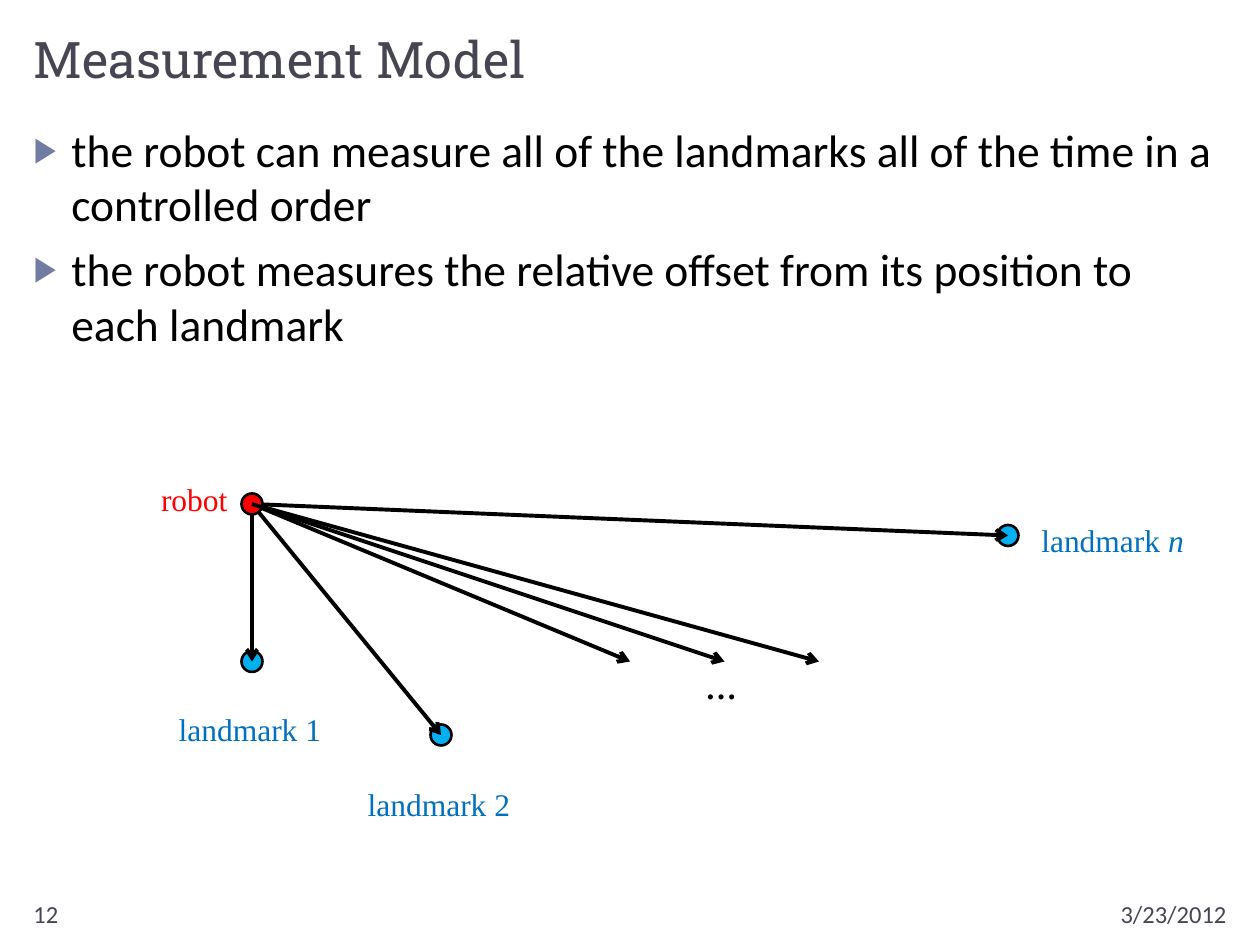
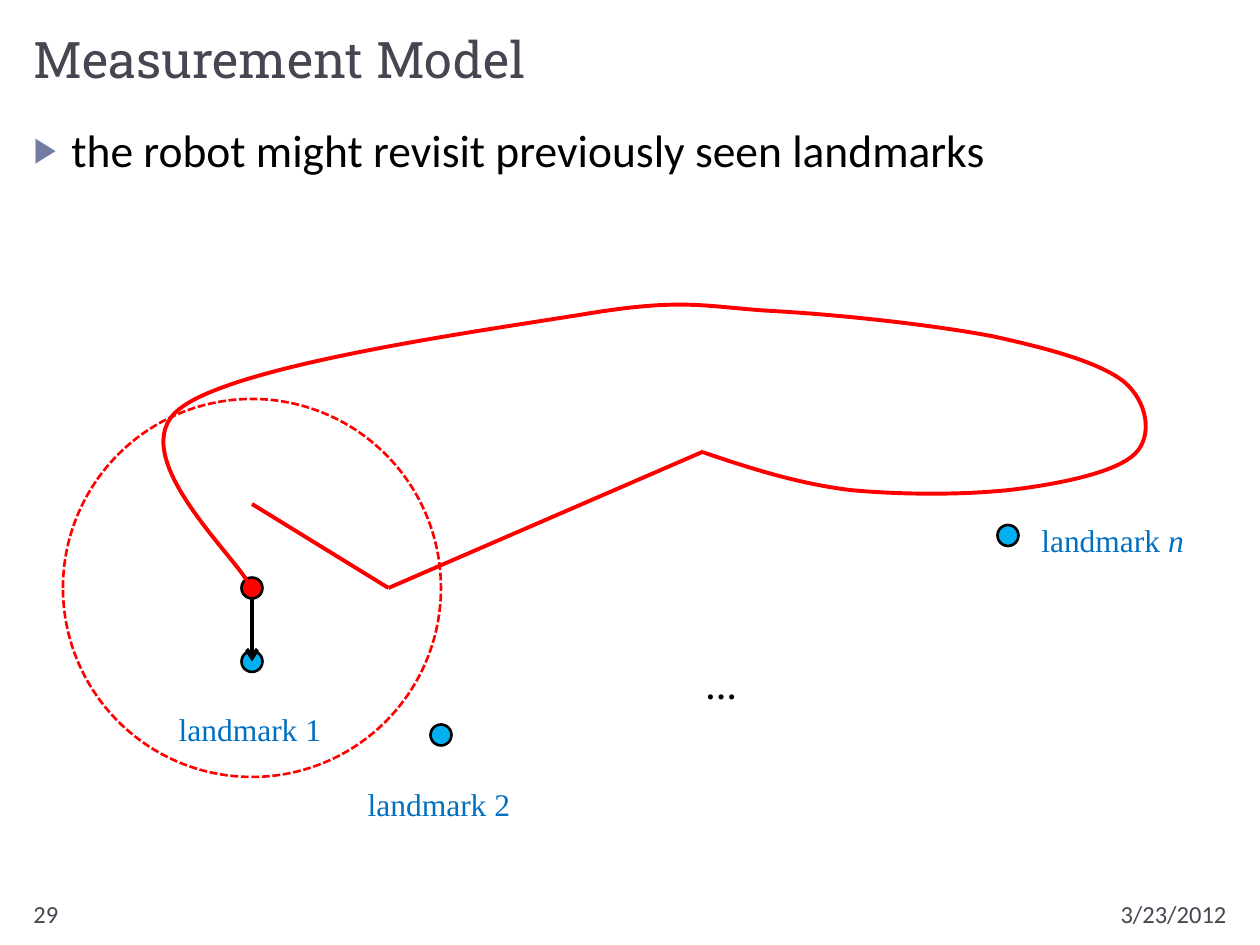
from dataclasses import dataclass

from lxml.etree import SubElement
from pptx import Presentation
from pptx.dml.color import RGBColor
from pptx.enum.dml import MSO_LINE
from pptx.enum.shapes import MSO_CONNECTOR, MSO_SHAPE
from pptx.enum.text import MSO_ANCHOR, MSO_AUTO_SIZE, PP_ALIGN
from pptx.oxml.ns import qn
from pptx.util import Inches, Pt


@dataclass(frozen=True)
class Theme:
    # Colours
    ink: str = "464653"
    black: str = "000000"
    bullet: str = "727CA3"
    robot: str = "FF0000"
    landmark: str = "00B0F0"
    landmark_text: str = "0070C0"
    # Fonts
    title_font: str = "Roboto Slab"
    body_font: str = "Calibri"
    label_font: str = "Times New Roman"
    # Type sizes and line widths in points
    title_size: float = 28.8
    body_size: float = 26
    label_size: float = 18
    footer_size: float = 14
    outline: float = 1.5
    stroke: float = 2.25


# Layout grid of twelfths of an inch
UNIT = 1 / 12
MARGIN = 2 * UNIT
CONTENT_WIDTH = 10 - 2 * MARGIN
DOT = 2 * UNIT

DATE = "3/23/2012"
ROBOT_START = (2, 4)
ROBOT_RETURN = (2, 56 * UNIT)
LANDMARK_1, LANDMARK_2, LANDMARK_N = (2, 5.25), (3.5, 70 * UNIT), (8, 4.25)
SENSOR_RADIUS = 1.5

# Start of the return path, then (control, control, end) for each curve
PATH_START = (5.58, 3.59)
PATH_CURVES = [
    ((5.96, 3.72), (6.34, 3.84), (6.75, 3.89)),
    ((7.17, 3.93), (7.71, 3.93), (8.09, 3.88)),
    ((8.47, 3.83), (8.87, 3.74), (9.01, 3.6)),
    ((9.15, 3.46), (9.11, 3.19), (8.92, 3.03)),
    ((8.73, 2.88), (8.34, 2.77), (7.88, 2.67)),
    ((7.41, 2.58), (6.68, 2.5), (6.15, 2.47)),
    ((5.61, 2.44), (5.45, 2.36), (4.66, 2.49)),
    ((3.87, 2.62), (1.86, 2.89), (1.42, 3.25)),
    ((0.97, 3.61), (1.89, 4.43), (1.99, 4.66)),
]


class Deck:
    def __init__(self, theme):
        self.theme = theme
        self.prs = Presentation()
        self.prs.slide_width, self.prs.slide_height = Inches(10), Inches(7.5)
        self.s = None

    # Shared helpers
    def place(self, sp, left, top, width, height):
        box = dict(left=left, top=top, width=width, height=height)
        for name, value in box.items():
            setattr(sp, name, Inches(value))

    def frame(self, sp, **formats):
        for name, value in formats.items():
            setattr(sp.text_frame, name, value)
        return sp.text_frame

    def run(self, p, text, font, size, color, **formats):
        r = p.add_run()
        r.text = text
        for name, value in dict(name=font, size=Pt(size), **formats).items():
            setattr(r.font, name, value)
        r.font.color.rgb = RGBColor.from_string(color)

    def stroke(self, sp, color, width):
        sp.line.color.rgb = RGBColor.from_string(color)
        sp.line.width = Pt(width)

    # Slide with title, bulleted body and footers
    def slide(self, title, bullets, number):
        th = self.theme
        self.s = self.prs.slides.add_slide(self.prs.slide_layouts[1])
        sp = self.s.shapes.title
        self.place(sp, MARGIN, MARGIN, CONTENT_WIDTH, 7 * UNIT)
        tf = self.frame(sp, vertical_anchor=MSO_ANCHOR.BOTTOM,
                        auto_size=MSO_AUTO_SIZE.NONE)
        p = tf.paragraphs[0]
        p.alignment = PP_ALIGN.LEFT
        self.run(p, title, th.title_font, th.title_size, th.ink)
        self.body(bullets)
        self.footer(8, 22 * UNIT, DATE, PP_ALIGN.RIGHT)
        self.footer(MARGIN, 26 * UNIT, number, PP_ALIGN.LEFT)

    def body(self, bullets):
        th = self.theme
        sp = self.s.placeholders[1]
        self.place(sp, MARGIN, 11 * UNIT, CONTENT_WIDTH, 6)
        tf = self.frame(sp, auto_size=MSO_AUTO_SIZE.NONE)
        for i, text in enumerate(bullets):
            p = tf.add_paragraph() if i else tf.paragraphs[0]
            p.space_before = Pt(6)
            self.bullet(p)
            self.run(p, text, th.body_font, th.body_size, th.black)

    def bullet(self, p):
        pPr = p._p.get_or_add_pPr()
        pPr.set("marL", str(Inches(0.3)))
        pPr.set("indent", str(-Inches(0.3)))
        color = SubElement(pPr, qn("a:buClr"))
        SubElement(color, qn("a:srgbClr"), val=self.theme.bullet)
        SubElement(pPr, qn("a:buSzPct"), val="76000")
        SubElement(pPr, qn("a:buChar"), char="▶")

    def footer(self, left, width, text, alignment):
        th = self.theme
        sp = self.s.shapes.add_textbox(
            Inches(left), Inches(85 * UNIT), Inches(width), Inches(0.27))
        p = self.frame(sp, word_wrap=True).paragraphs[0]
        p.alignment = alignment
        self.run(p, text, th.body_font, th.footer_size, th.ink)

    # Diagram elements
    def label(self, left, top, width, text, color, italic="", **formats):
        th = self.theme
        sp = self.s.shapes.add_textbox(
            Inches(left), Inches(top), Inches(width), Inches(0.4))
        tf = self.frame(sp, word_wrap=False,
                        auto_size=MSO_AUTO_SIZE.SHAPE_TO_FIT_TEXT)
        p = tf.paragraphs[0]
        self.run(p, text, th.label_font, th.label_size, color, **formats)
        if italic:
            self.run(p, italic, th.label_font, th.label_size, color, italic=True)

    def circle(self, center, diameter, line, fill=None):
        x, y = (c - diameter / 2 for c in center)
        sp = self.s.shapes.add_shape(
            MSO_SHAPE.OVAL, Inches(x), Inches(y),
            Inches(diameter), Inches(diameter))
        sp.shadow.inherit = False
        self.stroke(sp, line, self.theme.outline)
        if fill:
            sp.fill.solid()
            sp.fill.fore_color.rgb = RGBColor.from_string(fill)
        else:
            sp.fill.background()
        return sp

    def dot(self, center, fill):
        self.circle(center, DOT, self.theme.black, fill)

    def sensor_range(self, center):
        sp = self.circle(center, 2 * SENSOR_RADIUS, self.theme.robot)
        sp.line.dash_style = MSO_LINE.SQUARE_DOT
        sp.line._get_or_add_ln().find(qn("a:prstDash")).set("val", "sysDash")

    def line(self, start, end, color, arrow=False):
        sp = self.s.shapes.add_connector(
            MSO_CONNECTOR.STRAIGHT, *map(Inches, (*start, *end)))
        self.stroke(sp, color, self.theme.stroke)
        if arrow:
            SubElement(sp.line._get_or_add_ln(), qn("a:tailEnd"), type="arrow")
        SubElement(sp._element.spPr, qn("a:effectLst"))

    def arrow(self, start, end):
        self.line(start, end, self.theme.black, arrow=True)

    def curve(self, start, curves, color):
        points = [tuple(map(Inches, pt)) for curve in curves for pt in curve]
        builder = self.s.shapes.build_freeform(*map(Inches, start))
        builder.add_line_segments(points, close=False)
        sp = builder.convert_to_shape()
        # Turn each three segments into one cubic curve
        segments = list(sp._element.iter(qn("a:lnTo")))
        outline = segments[0].getparent()
        for i in range(0, len(segments), 3):
            cubic = SubElement(outline, qn("a:cubicBezTo"))
            for segment in segments[i:i + 3]:
                cubic.append(segment[0])
                outline.remove(segment)
        sp.shadow.inherit = False
        sp.fill.background()
        self.stroke(sp, color, self.theme.stroke)

    def landmarks(self):
        th = self.theme
        for center in (LANDMARK_N, LANDMARK_2, LANDMARK_1):
            self.dot(center, th.landmark)
        self.label(1.32, 67 * UNIT, 1.34, "landmark 1", th.landmark_text)
        self.label(2.82, 6.18, 1.34, "landmark 2", th.landmark_text)
        self.label(98 * UNIT, 49 * UNIT, 1.34, "landmark ", th.landmark_text,
                   italic="n")
        self.label(5.5, 5.25, 0.45, "…", th.black, bold=True)


def main():
    th = Theme()
    deck = Deck(th)

    # Measuring every landmark
    deck.slide("Measurement Model", [
        "the robot can measure all of the landmarks all of the time in a "
        "controlled order",
        "the robot measures the relative offset from its position to each "
        "landmark",
    ], "12")
    deck.landmarks()
    for target in (LANDMARK_1, LANDMARK_2, (5, 5.25), (6.5, 5.25), LANDMARK_N):
        deck.arrow(ROBOT_START, target)
    deck.dot(ROBOT_START, th.robot)
    deck.label(1.18, 3.76, 0.73, "robot", th.robot)
    deck.arrow(ROBOT_START, (5.75, 5.25))

    # Revisiting the first landmark
    deck.slide("Measurement Model",
               ["the robot might revisit previously seen landmarks"], "29")
    deck.sensor_range(ROBOT_RETURN)
    deck.landmarks()
    deck.arrow(ROBOT_RETURN, LANDMARK_1)
    deck.dot(ROBOT_RETURN, th.robot)
    turns = [ROBOT_START, (37 * UNIT, 56 * UNIT), (67 * UNIT, 43 * UNIT)]
    for start, end in zip(turns, turns[1:]):
        deck.line(start, end, th.robot)
    deck.curve(PATH_START, PATH_CURVES, th.robot)

    deck.prs.save("out.pptx")


if __name__ == "__main__":
    main()
